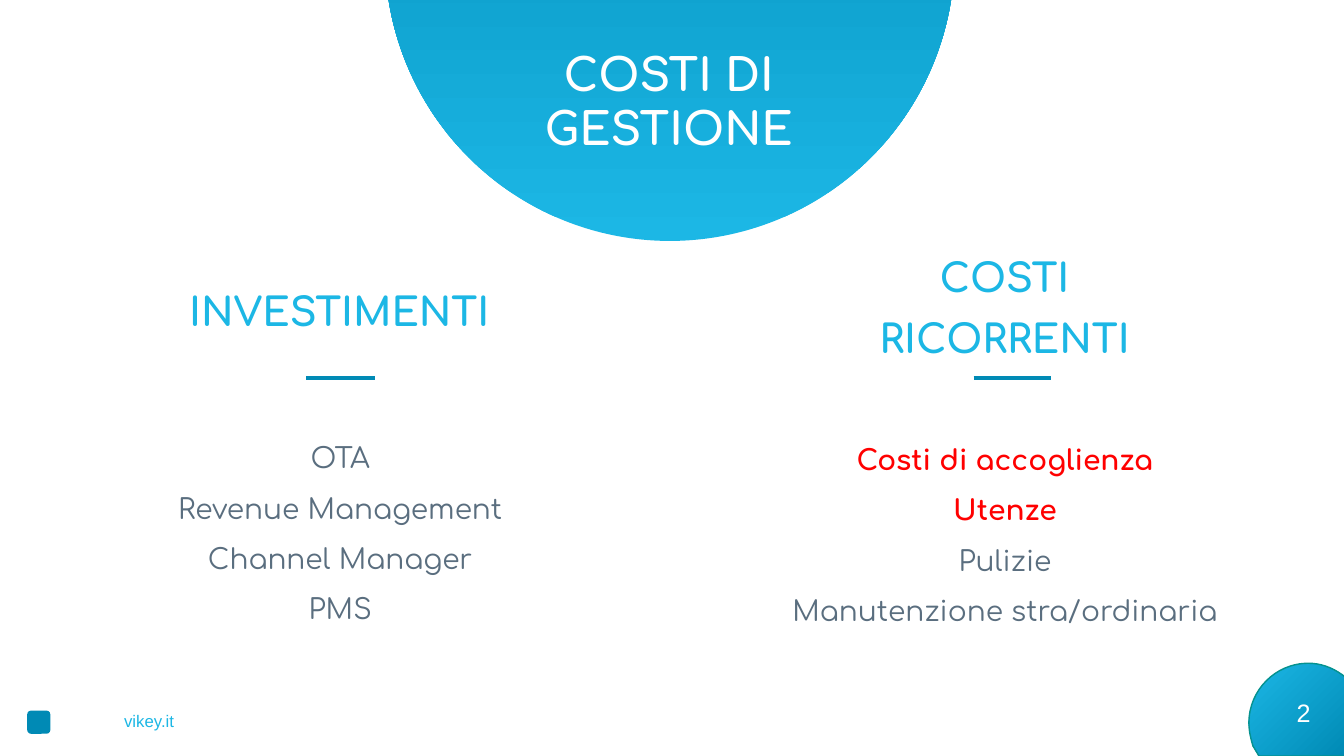
from dataclasses import dataclass

from lxml import etree
from pptx import Presentation
from pptx import util as u
from pptx.dml.color import RGBColor
from pptx.enum import shapes, text
from pptx.oxml.ns import qn

# Grid: square cells of a tenth of an inch
COLUMNS, ROWS = 133.33, 75
CELL = u.Inches(0.1)


@dataclass(frozen=True)
class Theme:
    sky: str = "1CB7E5"
    deep: str = "008AB5"
    teal: str = "05928F"
    slate: str = "5A6E7F"
    red: str = "FF0000"
    white: str = "FFFFFF"
    display: str = "Comfortaa"
    plain: str = "Arial"
    title: int = 32
    heading: int = 28
    item: int = 20
    number: int = 18
    footer: int = 12


THEME = Theme()


def cells(*counts):
    return [round(count * CELL) for count in counts]


def colour(code):
    return RGBColor.from_string(code)


def place(box, left, top, width, height):
    box.left, box.top, box.width, box.height = cells(left, top, width, height)


def prepare_frame(box, anchor, inset):
    frame = box.text_frame
    frame.word_wrap = True
    frame.auto_size = text.MSO_AUTO_SIZE.NONE
    frame.vertical_anchor = anchor
    frame.margin_left = frame.margin_right = u.Inches(0.1)
    frame.margin_top = frame.margin_bottom = u.Inches(inset)
    return frame


def write(box, lines, size, font, align=text.PP_ALIGN.CENTER, spacing=1.0,
          anchor=text.MSO_ANCHOR.MIDDLE, inset=0.05):
    """Each line is (wording, colour code, bold)."""
    frame = prepare_frame(box, anchor, inset)
    for index, (wording, code, bold) in enumerate(lines):
        para = frame.add_paragraph() if index else frame.paragraphs[0]
        properties = para._p.get_or_add_pPr()
        properties.set("marL", "0")
        properties.set("indent", "0")
        etree.SubElement(properties, qn("a:buNone"))
        para.alignment = align
        para.line_spacing = spacing
        para.space_before = u.Pt(0)
        span = para.add_run()
        span.text = wording
        span.font.name, span.font.size = font, u.Pt(size)
        span.font.bold = bold
        span.font.color.rgb = colour(code)


def shade(shape, angle):
    shape.shadow.inherit = False
    shape.fill.gradient()
    shape.fill.gradient_angle = angle
    for stop, code in zip(shape.fill.gradient_stops, (THEME.sky, THEME.deep)):
        stop.color.rgb = colour(code)


def add_preset(page, kind, area):
    """Plain preset shape without outline or shadow."""
    shape = page.shapes.add_shape(kind, *cells(*area))
    shape.shadow.inherit = False
    shape.line.fill.background()
    return shape


def add_title_disc(page):
    disc = add_preset(page, shapes.MSO_SHAPE.FLOWCHART_DELAY, (38.1, -32.7, 56.7, 56.5))
    disc.rotation = 90
    shade(disc, 180)
    page.shapes._spTree.insert(2, disc._element)


def add_corner_disc(page):
    """Disc trimmed by the corner of the slide, with Bézier sides."""
    start = (129.8, 65.8)
    steps = [("curve", (131, 65.8), (132.1, 66.2), (133.1, 66.9)),
             ("line", (133.5, 67.2)), ("line", (133.5, ROWS)), ("line", (124.9, ROWS)),
             ("line", (124.3, 74)),
             ("curve", (124.1, 73.3), (123.9, 72.6), (123.9, 71.7)),
             ("curve", (123.9, 68.5), (126.5, 65.8), start)]
    builder = page.shapes.build_freeform(*cells(*start), scale=1.0)
    builder.add_line_segments([cells(*point) for _, *points in steps for point in points],
                              close=True)
    disc = builder.convert_to_shape()
    segments = iter(disc._element.findall(".//" + qn("a:lnTo")))
    for kind, *points in steps:
        group = [next(segments) for _ in points]
        if kind == "curve":
            curve = etree.Element(qn("a:cubicBezTo"))
            group[0].addprevious(curve)
            for segment in group:
                curve.append(segment[0])
                segment.getparent().remove(segment)
    shade(disc, 315)
    disc.line.color.rgb = colour(THEME.teal)
    disc.line.width = u.Pt(1)


def add_rule(page, left, right, row):
    rule = page.shapes.add_connector(shapes.MSO_CONNECTOR.STRAIGHT,
                                     *cells(left, row, right, row))
    rule.line.color.rgb = colour(THEME.deep)
    rule.line.width = u.Pt(3)
    etree.SubElement(rule._element.spPr, qn("a:effectLst"))


def add_footer(page):
    badge = add_preset(page, shapes.MSO_SHAPE.ROUNDED_RECTANGLE, (2.7, 70.5, 2.3, 2.3))
    badge.fill.solid()
    badge.fill.fore_color.rgb = colour(THEME.deep)
    address = add_preset(page, shapes.MSO_SHAPE.ROUNDED_RECTANGLE,
                         (11.3, 70.4, 18.2, 2.7))
    address.adjustments[0] = 0.03
    address.fill.background()
    write(address, [("vikey.it", THEME.sky, False)], THEME.footer, THEME.plain,
          text.PP_ALIGN.LEFT, spacing=0.8, anchor=text.MSO_ANCHOR.TOP)
    number = page.shapes.add_textbox(*cells(119, 68.7, 12, 4))
    write(number, [("2", THEME.white, False)], THEME.number, THEME.plain,
          text.PP_ALIGN.RIGHT, anchor=text.MSO_ANCHOR.TOP)


def fill_column(page, first, heading, heading_area, items, list_area, rule, inset):
    """Heading, short rule and list; first is the heading placeholder's index."""
    head, body = page.placeholders[first], page.placeholders[first + 1]
    place(head, *heading_area)
    write(head, [(heading, THEME.sky, True)], THEME.heading, THEME.display, spacing=1.3)
    add_rule(page, *rule, row=37.5)
    place(body, *list_area)
    write(body, items, THEME.item, THEME.display, spacing=1.5,
          anchor=text.MSO_ANCHOR.TOP, inset=inset)


def main():
    deck = Presentation()
    deck.slide_width, deck.slide_height = cells(COLUMNS, ROWS)
    page = deck.slides.add_slide(deck.slide_layouts.get_by_name("Comparison"))

    # Title on the large disc
    add_title_disc(page)
    place(page.shapes.title, 42.3, 3.4, 48.1, 13.2)
    write(page.shapes.title, [("COSTI DI GESTIONE", THEME.white, True)],
          THEME.title, THEME.display)

    # Two columns of costs
    investments = ["OTA", "Revenue Management", "Channel Manager", "PMS"]
    fill_column(page, 1, "INVESTIMENTI", (15.8, 26.7, 35.7, 6.9),
                [(item, THEME.slate, False) for item in investments],
                (14.55, 41.05, 38.4, 22.2), (30.4, 37.2), inset=0.1)
    recurring = [("Costi di accoglienza", THEME.red, True),
                 ("Utenze", THEME.red, True),
                 ("Pulizie", THEME.slate, False),
                 ("Manutenzione stra/ordinaria", THEME.slate, False)]
    fill_column(page, 3, "COSTI RICORRENTI", (81.8, 26.3, 35.7, 6.9),
                recurring, (75.5, 41.73, 48.4, 24.2), (96.6, 104.3), inset=0.05)

    # Footer and page number
    add_corner_disc(page)
    add_footer(page)

    deck.save("out.pptx")


if __name__ == "__main__":
    main()
